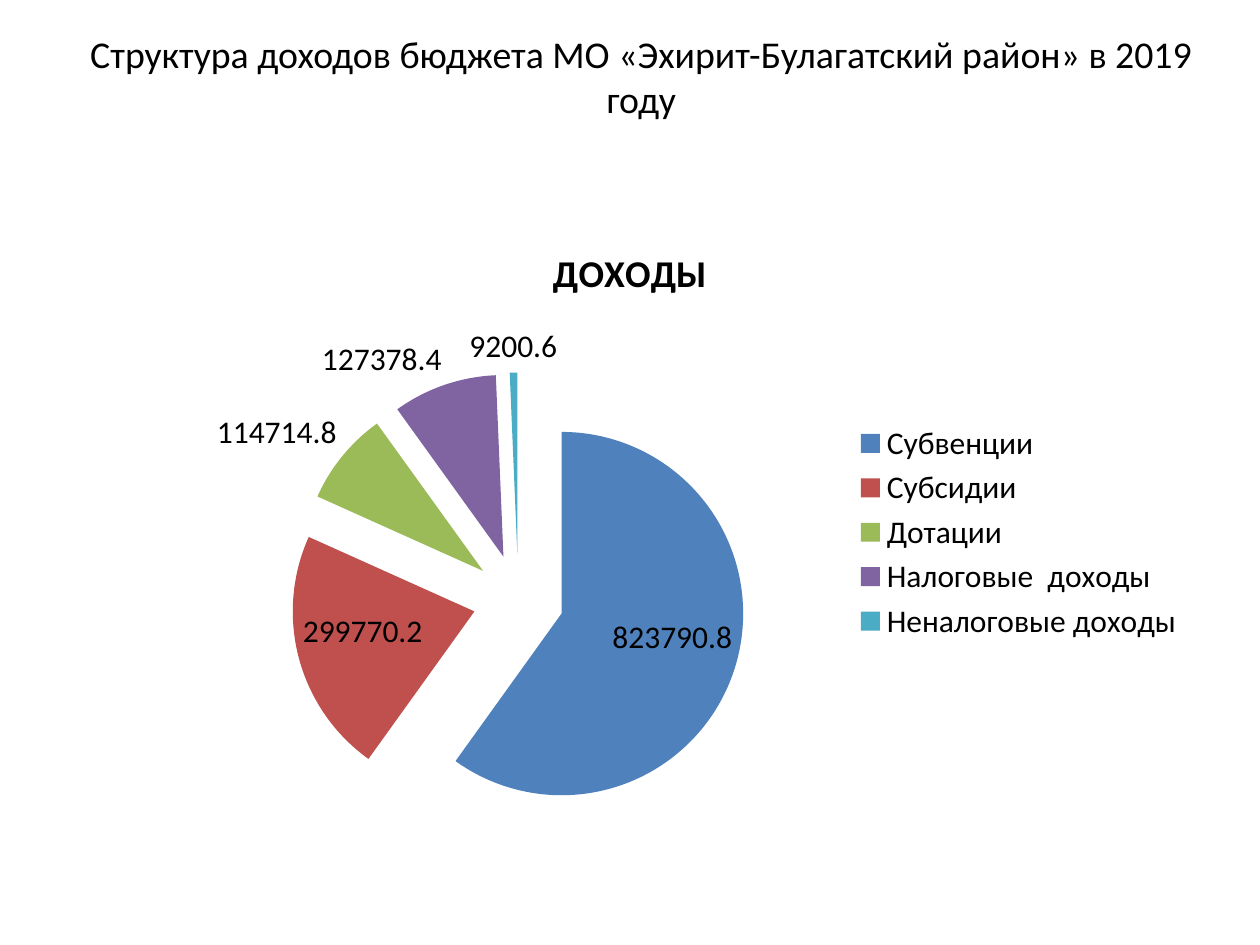
import pptx
import pptx.chart.data
import pptx.dml.color
import pptx.enum.chart
import pptx.enum.text
import pptx.oxml
import pptx.util
from pptx.util import Pt

RGBColor = pptx.dml.color.RGBColor
BLACK = RGBColor(0x00, 0x00, 0x00)
BLUE = RGBColor(0x4F, 0x81, 0xBD)
RED = RGBColor(0xC0, 0x50, 0x4D)
GREEN = RGBColor(0x9B, 0xBB, 0x59)
PURPLE = RGBColor(0x80, 0x64, 0xA2)
TEAL = RGBColor(0x4B, 0xAC, 0xC6)

FONT_NAME = "Calibri"
CHART_TITLE = "ДОХОДЫ"
INCOME = [
    ("Субвенции", 823790.8, BLUE),
    ("Субсидии", 299770.2, RED),
    ("Дотации", 114714.8, GREEN),
    ("Налоговые  доходы", 127378.4, PURPLE),
    ("Неналоговые доходы", 9200.6, TEAL),
]


def format_font(font, size, bold=False, color=BLACK):
    """Apply the slide font with the given size, weight and colour."""
    font.name = FONT_NAME
    font.size = Pt(size)
    font.bold = bold
    font.color.rgb = color


def write_text(text_frame, text, alignment=pptx.enum.text.PP_ALIGN.CENTER, **font_format):
    """Put one formatted paragraph into a text frame."""
    text_frame.text = text
    paragraph = text_frame.paragraphs[0]
    paragraph.alignment = alignment
    format_font(paragraph.runs[0].font, **font_format)


def add_title(slide, text):
    """Place and fill the title placeholder."""
    title = slide.shapes.title
    title.left, title.top, title.width, title.height = Pt(42.5), Pt(15), Pt(648), Pt(57)
    title.text_frame.auto_size = pptx.enum.text.MSO_AUTO_SIZE.NONE
    title.text_frame.vertical_anchor = pptx.enum.text.MSO_ANCHOR.MIDDLE
    write_text(title.text_frame, text, size=21.6)


def color_slices(series, colors, explosion):
    """Colour every slice and pull the slices apart by a percentage."""
    for index, color in enumerate(colors):
        fill = series.points[index].format.fill
        fill.solid()
        fill.fore_color.rgb = color
    element = pptx.oxml.parse_xml(
        '<c:explosion xmlns:c="http://schemas.openxmlformats.org/drawingml/2006/chart"'
        f' val="{explosion}"/>'
    )
    series.points[0].format.fill
    series._element.xpath("c:dPt")[0].addprevious(element)


def add_income_chart(slide):
    """Add the exploded pie chart of budget income."""
    categories, values, colors = zip(*INCOME)
    chart_data = pptx.chart.data.CategoryChartData(number_format="General")
    chart_data.categories = categories
    chart_data.add_series(CHART_TITLE, values)
    chart = slide.shapes.add_chart(
        pptx.enum.chart.XL_CHART_TYPE.PIE, Pt(36), Pt(126), Pt(648), Pt(356.4), chart_data
    ).chart
    format_font(chart.font, size=18)
    chart.has_title = True
    write_text(chart.chart_title.text_frame, CHART_TITLE, size=21.6, bold=True)
    chart.chart_title.include_in_layout = False
    chart.has_legend = True
    chart.legend.position = pptx.enum.chart.XL_LEGEND_POSITION.RIGHT
    chart.legend.include_in_layout = False
    format_font(chart.legend.font, size=18)

    plot = chart.plots[0]
    plot.vary_by_categories = True
    color_slices(plot.series[0], colors, explosion=25)
    labels = plot.series[0].data_labels
    labels.show_value = True
    labels.position = pptx.enum.chart.XL_LABEL_POSITION.BEST_FIT
    format_font(labels.font, size=18)


def main():
    """Build and save the presentation."""
    presentation = pptx.Presentation()
    presentation.slide_width, presentation.slide_height = Pt(720), Pt(540)
    slide = presentation.slides.add_slide(presentation.slide_layouts[5])
    add_title(slide, "Структура доходов бюджета МО «Эхирит-Булагатский район» в 2019 году")
    add_income_chart(slide)
    presentation.save("out.pptx")


if __name__ == "__main__":
    main()
